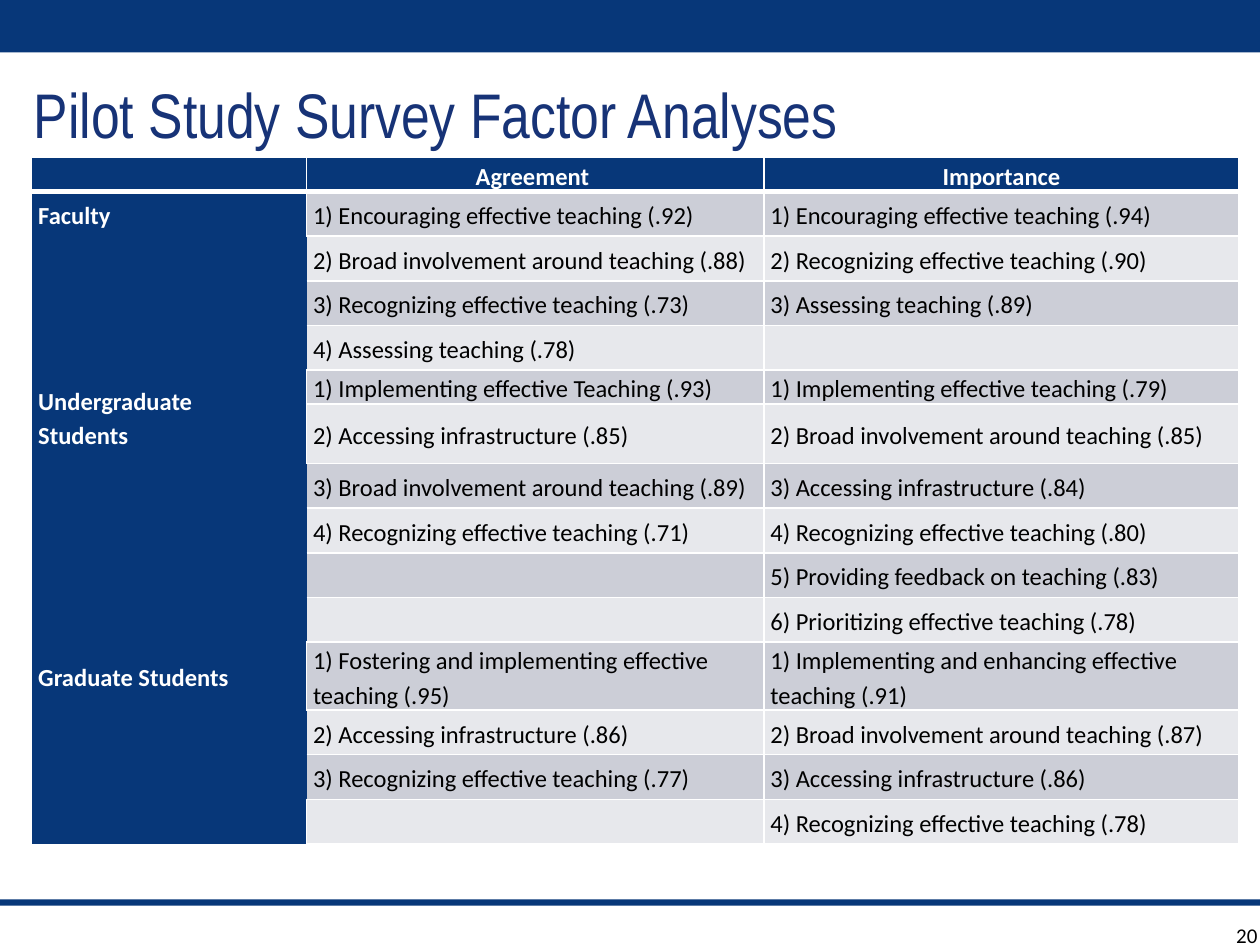
from dataclasses import dataclass
from itertools import zip_longest

from lxml.etree import SubElement
from pptx import Presentation
from pptx.dml.color import RGBColor
from pptx.enum.shapes import MSO_SHAPE as Preset
from pptx.enum.text import MSO_ANCHOR as Anchor, MSO_AUTO_SIZE as AutoSize, PP_ALIGN as Align
from pptx.oxml.ns import qn
from pptx.util import Cm, Pt


@dataclass(frozen=True)
class Theme:
    navy: str = "073779"
    title_blue: str = "173377"
    band_dark: str = "CCCED7"
    band_light: str = "E7E8EC"
    white: str = "FFFFFF"
    black: str = "000000"
    title_font: str = "Arial Narrow"
    body_font: str = "Calibri"
    title_size: int = 36
    table_size: int = 14
    number_size: int = 12
    rule: int = 1
    header_rule: int = 3


THEME = Theme()
PLAIN_TABLE_STYLE = "{2D5ABB26-0587-4C30-8999-92F81FD0307C}"

HEADINGS = ["", "Agreement ", "Importance"]
# Group label, agreement factors, importance factors
GROUPS = [
    ("Faculty",
     ["Encouraging effective teaching (.92)",
      "Broad involvement around teaching (.88)",
      "Recognizing effective teaching (.73)",
      "Assessing teaching (.78)"],
     ["Encouraging effective teaching (.94)",
      "Recognizing effective teaching (.90)",
      "Assessing teaching (.89)"]),
    ("Undergraduate\nStudents",
     ["Implementing effective Teaching (.93)",
      "Accessing infrastructure (.85)",
      "Broad involvement around teaching (.89)",
      "Recognizing effective teaching (.71)"],
     ["Implementing effective teaching (.79)",
      "Broad involvement around teaching (.85)",
      "Accessing infrastructure (.84)",
      "Recognizing effective teaching (.80)",
      "Providing feedback on teaching (.83)",
      "Prioritizing effective teaching (.78)"]),
    ("Graduate Students",
     ["Fostering and implementing effective teaching (.95)",
      "Accessing infrastructure (.86)",
      "Recognizing effective teaching (.77)"],
     ["Implementing and enhancing effective teaching (.91)",
      "Broad involvement around teaching (.87)",
      "Accessing infrastructure (.86)",
      "Recognizing effective teaching (.78)"]),
]
COLUMN_WIDTHS = [5.54, 9.22, 9.58]
ROW_HEIGHT = 0.9
SPECIAL_HEIGHTS = {0: 0.46, 5: 0.46, 6: 1.2, 11: 1.37}


def color(value):
    return RGBColor.from_string(value)


def format_runs(paragraph, font, size, text_color, bold=False):
    for run in paragraph.runs:
        run.font.name = font
        run.font.size = Pt(size)
        run.font.bold = bold
        run.font.color.rgb = color(text_color)


def add_bar(slide, left, top, width, height):
    bar = slide.shapes.add_shape(Preset.RECTANGLE, Cm(left), Cm(top), Cm(width), Cm(height))
    bar.shadow.inherit = False
    bar.fill.solid()
    bar.fill.fore_color.rgb = color(THEME.navy)
    bar.line.fill.background()


def place_title(slide, left, top, width, height):
    title = slide.shapes.title
    title.left, title.top, title.width, title.height = map(Cm, (left, top, width, height))
    frame = title.text_frame
    frame.text = "Pilot Study Survey Factor Analyses"
    frame.auto_size = AutoSize.NONE
    frame.vertical_anchor = Anchor.BOTTOM
    frame.paragraphs[0].alignment = Align.LEFT
    format_runs(frame.paragraphs[0], THEME.title_font, THEME.title_size, THEME.title_blue)


def add_page_number(slide, left, top, width, height):
    frame = slide.shapes.add_textbox(Cm(left), Cm(top), Cm(width), Cm(height)).text_frame
    frame.word_wrap = True
    frame.text = "20"
    frame.paragraphs[0].alignment = Align.RIGHT
    format_runs(frame.paragraphs[0], THEME.body_font, THEME.number_size, THEME.black)


def set_borders(cell, widths):
    """Draw white borders; widths maps the sides L, R, T, B to points."""
    properties = cell._tc.get_or_add_tcPr()
    for side in "LRTB":
        if side in widths:
            line = SubElement(properties, qn(f"a:ln{side}"), w=str(Pt(widths[side])))
            fill = SubElement(line, qn("a:solidFill"))
            SubElement(fill, qn("a:srgbClr"), val=THEME.white)


def fill_cell(cell, text, fill, text_color, borders, bold=False,
              alignment=Align.LEFT, anchor=Anchor.MIDDLE):
    cell.margin_left = cell.margin_right = Cm(0.13)
    cell.margin_top = cell.margin_bottom = 0
    cell.vertical_anchor = anchor
    set_borders(cell, borders)
    cell.fill.solid()
    cell.fill.fore_color.rgb = color(fill)
    cell.text_frame.text = text
    for paragraph in cell.text_frame.paragraphs:
        paragraph.alignment = alignment
        paragraph.line_spacing = 1.15
        format_runs(paragraph, THEME.body_font, THEME.table_size, text_color, bold)
        if not paragraph.runs:  # keeps an empty cell from stretching its row
            SubElement(paragraph._p, qn("a:endParaRPr"), sz=str(THEME.table_size * 100))


def table_rows():
    """Yield label, agreement and importance for each body row."""
    for label, *factor_lists in GROUPS:
        for number, factors in enumerate(zip_longest(*factor_lists), 1):
            texts = [f"{number}) {factor}" if factor else "" for factor in factors]
            yield [label if number == 1 else "", *texts]


def add_factor_table(slide, left, top):
    body = list(table_rows())
    heights = [SPECIAL_HEIGHTS.get(row, ROW_HEIGHT) for row in range(len(body) + 1)]
    frame = slide.shapes.add_table(len(heights), len(COLUMN_WIDTHS), Cm(left), Cm(top),
                                   Cm(sum(COLUMN_WIDTHS)), Cm(sum(heights)))
    table = frame.table
    table._tbl.tblPr.find(qn("a:tableStyleId")).text = PLAIN_TABLE_STYLE
    for column, width in zip(table.columns, COLUMN_WIDTHS):
        column.width = Cm(width)
    for row, height in zip(table.rows, heights):
        row.height = Cm(height)

    rule = THEME.rule
    for column, heading in enumerate(HEADINGS):
        fill_cell(table.cell(0, column), heading, THEME.navy, THEME.white,
                  {"L": rule, "R": rule, "T": rule, "B": THEME.header_rule},
                  bold=True, alignment=Align.CENTER, anchor=Anchor.TOP)

    group_row = 0
    for row, (label, *factors) in enumerate(body, 1):
        group_row = 1 if label else group_row + 1
        band = THEME.band_dark if group_row % 2 else THEME.band_light
        divided = label or row == len(body)
        fill_cell(table.cell(row, 0), label, THEME.navy, THEME.white,
                  {"R": rule} if divided else {}, bold=True)
        for column, text in enumerate(factors, 1):
            borders = {"R": rule, "B": rule}
            if divided or column > 1:
                borders["L"] = rule
            fill_cell(table.cell(row, column), text, band, THEME.black, borders)
        if "\n" in label:
            label_row = row
    table.cell(label_row, 0).merge(table.cell(label_row + 1, 0))


def main():
    presentation = Presentation()
    presentation.slide_width, presentation.slide_height = Cm(25.4), Cm(19.05)
    slide = presentation.slides.add_slide(presentation.slide_layouts[5])
    add_bar(slide, 0, 0, 25.4, 1.06)
    add_bar(slide, 0, 18.13, 25.4, 0.13)
    place_title(slide, 0.43, 1.06, 25.4, 2.12)
    add_page_number(slide, 23.5, 18.47, 2.1, 1.02)
    add_factor_table(slide, 0.64, 3.18)
    presentation.save("out.pptx")


if __name__ == "__main__":
    main()
